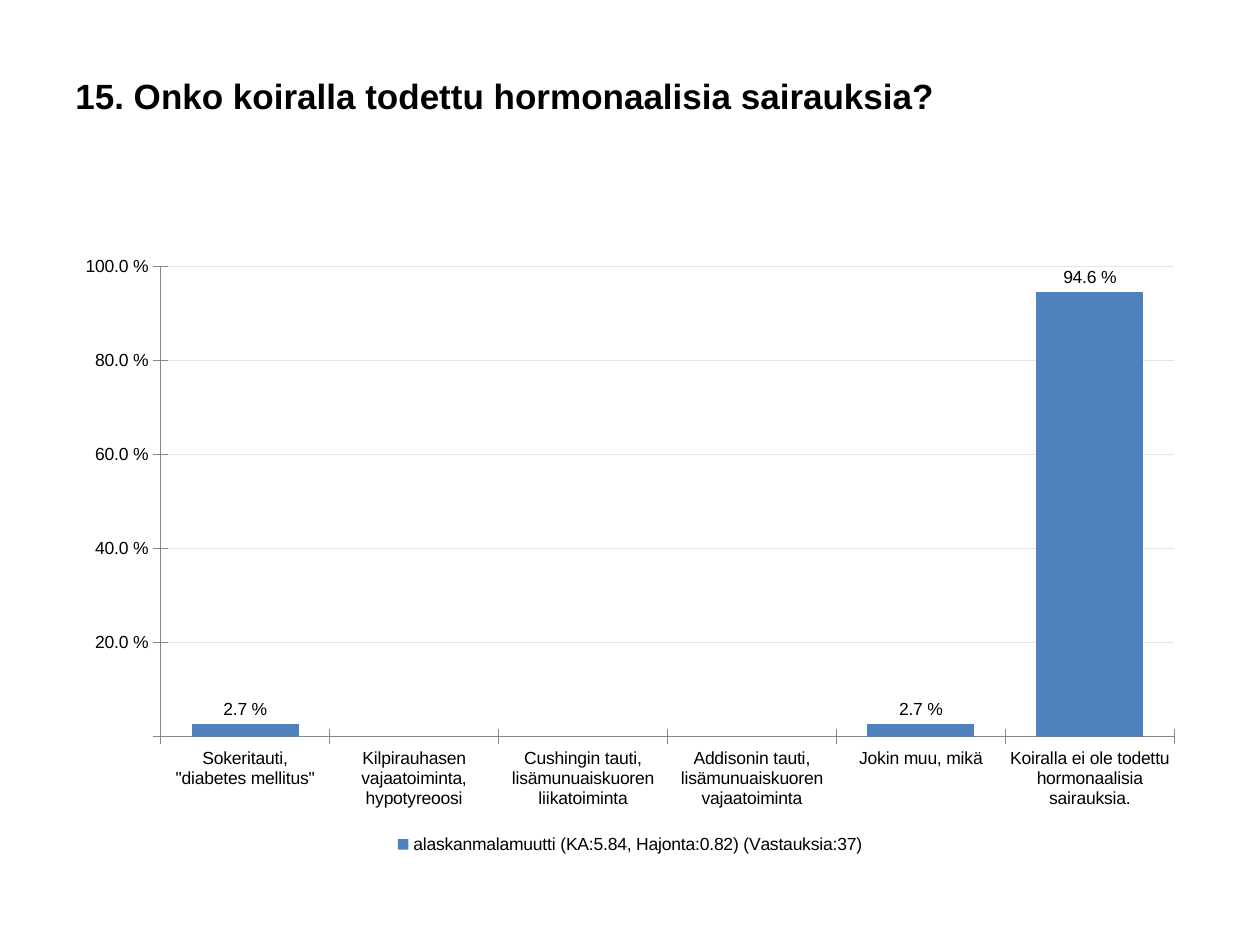
"""Build a survey slide with a titled column chart of answer shares."""
from dataclasses import dataclass

import pptx
import pptx.chart.data
import pptx.dml.color
import pptx.enum.chart
import pptx.enum.text
import pptx.util
from pptx.util import Inches


@dataclass(frozen=True)
class Theme:
    font: str = "Arial"
    text: str = "000000"
    series: str = "4F81BD"
    grid: str = "DCE6F2"
    axis: str = "868686"
    title_size: int = 20
    chart_size: int = 10
    line_width: float = 0.75
    percent: str = r"0.0\ %;;;"


SHARES = {
    'Sokeritauti, "diabetes mellitus"': 0.027,
    "Kilpirauhasen vajaatoiminta, hypotyreoosi": 0,
    "Cushingin tauti, lisämunuaiskuoren liikatoiminta": 0,
    "Addisonin tauti, lisämunuaiskuoren vajaatoiminta": 0,
    "Jokin muu, mikä": 0.027,
    "Koiralla ei ole todettu hormonaalisia sairauksia.": 0.946,
}


def color(value):
    return pptx.dml.color.RGBColor.from_string(value)


def style_font(font, theme, size, bold=False):
    font.name = theme.font
    font.size = pptx.util.Pt(size)
    font.bold = bold
    font.color.rgb = color(theme.text)


def write_text(frame, text, *, theme, size, bold=False):
    span = frame.paragraphs[0].add_run()
    span.text = text
    style_font(span.font, theme, size, bold)


class SlideBuilder:
    def __init__(self, slide, theme):
        self.slide = slide
        self.theme = theme

    def title(self, text, left, top, width, height):
        box = self.slide.shapes.add_textbox(left, top, width, height)
        frame = box.text_frame
        frame.word_wrap = True
        frame.vertical_anchor = pptx.enum.text.MSO_ANCHOR.MIDDLE
        write_text(frame, text, theme=self.theme, size=self.theme.title_size, bold=True)

    def line(self, line, value):
        line.color.rgb = color(value)
        line.width = pptx.util.Pt(self.theme.line_width)

    def axis(self, axis):
        axis.major_tick_mark = pptx.enum.chart.XL_TICK_MARK.CROSS
        axis.minor_tick_mark = pptx.enum.chart.XL_TICK_MARK.NONE
        self.line(axis.format.line, self.theme.axis)
        labels = axis.tick_labels
        labels.number_format = self.theme.percent
        labels.number_format_is_linked = False
        style_font(labels.font, self.theme, self.theme.chart_size)

    def column_chart(self, name, shares, left, top, width, height):
        theme = self.theme
        data = pptx.chart.data.CategoryChartData(number_format=theme.percent)
        data.categories = list(shares)
        data.add_series(name, list(shares.values()))
        kind = pptx.enum.chart.XL_CHART_TYPE.COLUMN_CLUSTERED
        chart = self.slide.shapes.add_chart(kind, left, top, width, height, data).chart
        chart.has_title = False
        style_font(chart.font, theme, theme.chart_size)

        chart.has_legend = True
        chart.legend.position = pptx.enum.chart.XL_LEGEND_POSITION.BOTTOM
        chart.legend.include_in_layout = False
        style_font(chart.legend.font, theme, theme.chart_size)

        self.axis(chart.category_axis)
        chart.category_axis.has_major_gridlines = False
        value_axis = chart.value_axis
        self.axis(value_axis)
        value_axis.minimum_scale = 0
        value_axis.maximum_scale = 1
        value_axis.major_unit = 0.2
        value_axis.has_major_gridlines = True
        self.line(value_axis.major_gridlines.format.line, theme.grid)

        plot = chart.plots[0]
        plot.gap_width = 58
        plot.vary_by_categories = False
        series = plot.series[0]
        series.invert_if_negative = False
        series.format.fill.solid()
        series.format.fill.fore_color.rgb = color(theme.series)
        labels = series.data_labels
        labels.show_value = True
        labels.number_format = theme.percent
        labels.number_format_is_linked = False
        labels.position = pptx.enum.chart.XL_LABEL_POSITION.OUTSIDE_END
        style_font(labels.font, theme, theme.chart_size)


def main():
    deck = pptx.Presentation()
    deck.slide_width = Inches(10)
    deck.slide_height = Inches(7.5)
    page = deck.slides.add_slide(deck.slide_layouts[6])
    builder = SlideBuilder(page, Theme())
    left, width = Inches(0.5), Inches(9)
    builder.title(
        "15. Onko koiralla todettu hormonaalisia sairauksia?",
        left, Inches(0.36), width, Inches(0.79),
    )
    builder.column_chart(
        "alaskanmalamuutti (KA:5.84, Hajonta:0.82) (Vastauksia:37)",
        SHARES, left, Inches(1.94), width, Inches(4.88),
    )
    deck.save("out.pptx")


if __name__ == "__main__":
    main()
